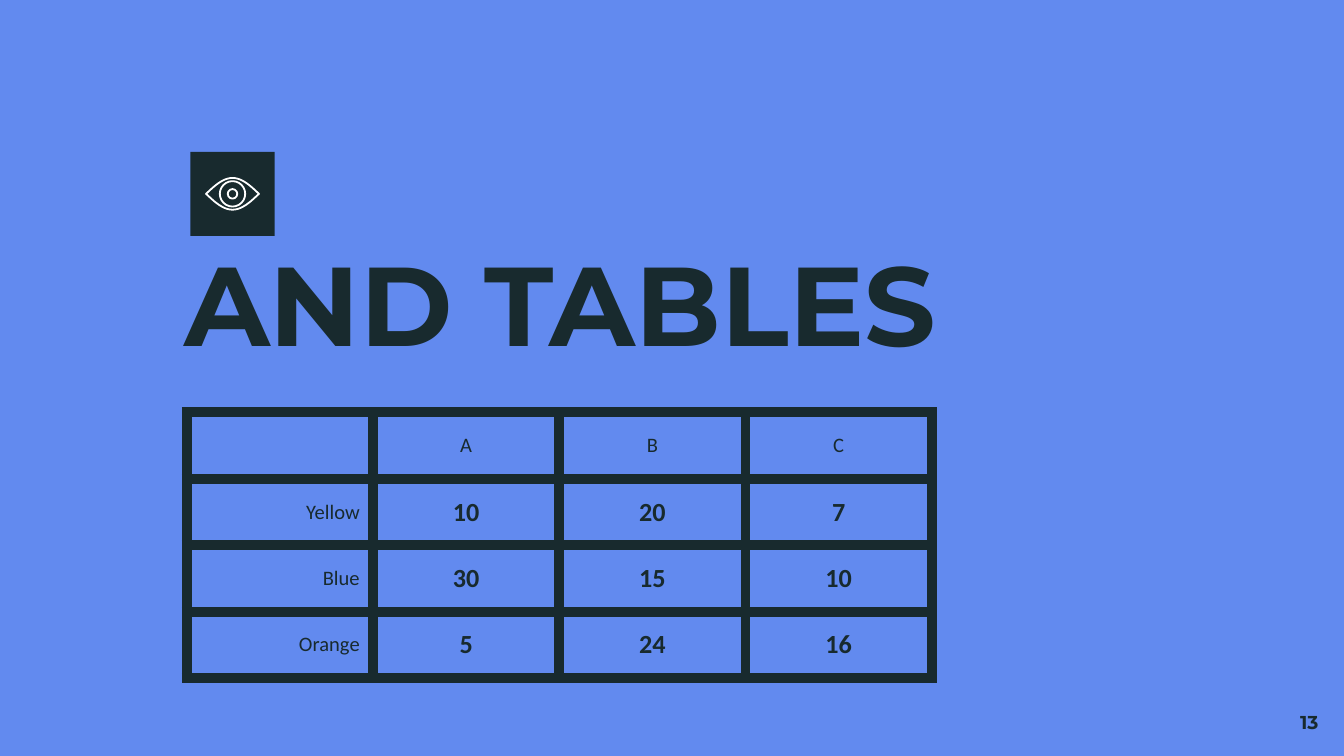
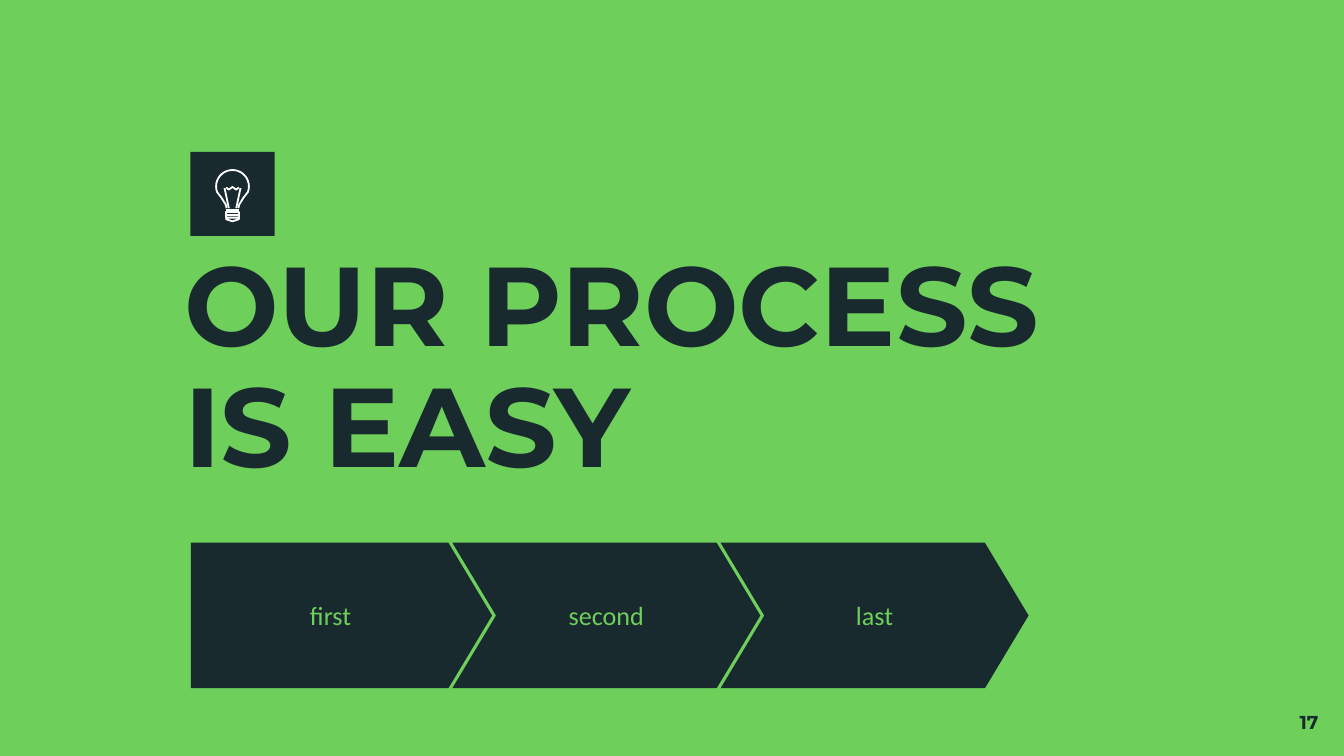
from dataclasses import dataclass
from math import cos, pi, radians, sin

from lxml.etree import SubElement
from pptx import Presentation
from pptx.dml.color import RGBColor as Rgb
from pptx.enum.shapes import MSO_CONNECTOR as Link, MSO_SHAPE as Kind
from pptx.enum.text import MSO_ANCHOR as Anchor, MSO_AUTO_SIZE as Fit, PP_ALIGN as Align
from pptx.oxml.ns import qn
from pptx.util import Cm, Pt


@dataclass(frozen=True)
class Theme:
    dark: str = "182A2E"
    blue: str = "628AEF"
    green: str = "6ECF5B"
    white: str = "FFFFFF"
    head: str = "Montserrat"
    body: str = "Calibri"
    title: int = 60
    value: int = 14
    label: int = 11
    page: int = 10
    icon: float = 0.96
    grid: int = 6


T = Theme()


def paint(shape, fill=None):
    """Solid shape without outline, or a white icon outline without fill."""
    shape.shadow.inherit = False
    if fill:
        shape.fill.solid()
        shape.fill.fore_color.rgb = Rgb.from_string(fill)
        shape.line.fill.background()
    else:
        shape.fill.background()
        shape.line.color.rgb = Rgb.from_string(T.white)
        shape.line.width = Pt(T.icon)


def write(frame, text, font, size, color, bold=False, align=Align.LEFT):
    """Put one formatted paragraph in a text frame or table cell frame."""
    frame.text = text
    para = frame.paragraphs[0]
    para.alignment = align
    para.font.name, para.font.size, para.font.bold = font, Pt(size), bold
    para.font.color.rgb = Rgb.from_string(color)
    return para


deck = Presentation()
deck.slide_width, deck.slide_height = Cm(25.4), Cm(14.29)

# Shared frame: background, badge, title, page number
slides = []
for title, back, page in (("AND TABLES", T.blue, "13"),
                          ("OUR PROCESS IS EASY", T.green, "17")):
    slide = deck.slides.add_slide(deck.slide_layouts[5])
    slides.append(slide)
    slide.background.fill.solid()
    slide.background.fill.fore_color.rgb = Rgb.from_string(back)

    badge = slide.shapes.add_shape(Kind.RECTANGLE, Cm(3.6), Cm(2.87), Cm(1.59), Cm(1.59))
    paint(badge, T.dark)

    head = slide.shapes.title
    head.left, head.top, head.width, head.height = Cm(3.23), Cm(4.47), Cm(18.92), Cm(5.36)
    para = write(head.text_frame, title, T.head, T.title, T.dark, True)
    para.line_spacing = 0.9

    foot = slide.shapes.add_textbox(Cm(23.65), Cm(13.18), Cm(1.52), Cm(1.09))
    write(foot.text_frame, page, T.head, T.page, T.dark, True, Align.RIGHT)

    for frame in (head.text_frame, foot.text_frame):
        frame.word_wrap, frame.auto_size = True, Fit.NONE
        frame.vertical_anchor = Anchor.TOP
        frame.margin_left = frame.margin_right = Cm(0.25)
        frame.margin_top = frame.margin_bottom = Cm(0.25)

first, second = slides
midx, midy = 4.395, 3.665  # badge centre, cm

# Table
rows = (("", "A", "B", "C"),
        ("Yellow", "10", "20", "7"),
        ("Blue", "30", "15", "10"),
        ("Orange", "5", "24", "16"))
table = first.shapes.add_table(4, 4, Cm(3.53), Cm(7.79), Cm(14.08), Cm(4.99)).table
table.first_row = table.horz_banding = False
for col in table.columns:
    col.width = Cm(3.52)
for r, row in enumerate(rows):
    table.rows[r].height = Cm(1.25 if r else 1.27)
    for c, text in enumerate(row):
        cell = table.cell(r, c)
        cell.vertical_anchor = Anchor.MIDDLE
        cell.margin_left = cell.margin_right = Cm(0.25)
        cell.margin_top = cell.margin_bottom = Cm(0.18)
        value = r > 0 and c > 0
        write(cell.text_frame, text, T.body, T.value if value else T.label, T.dark,
              value, Align.CENTER if c else Align.RIGHT)
        props = cell._tc.get_or_add_tcPr()
        for side in ("a:lnL", "a:lnR", "a:lnT", "a:lnB"):
            edge = SubElement(props, qn(side), w=str(Pt(T.grid)))
            SubElement(SubElement(edge, qn("a:solidFill")), qn("a:srgbClr"), val=T.dark)
        cell.fill.background()

# Eye icon
eye = first.shapes.add_group_shape().shapes
half = [(x / 100, 0.3 * cos(pi * x / 100)) for x in range(-50, 51, 5)]
lids = [(x, -y) for x, y in half] + half[-2:0:-1]
for size in (0.18, 0.48):
    ring = eye.add_shape(Kind.OVAL, Cm(midx - size / 2), Cm(midy - size / 2),
                         Cm(size), Cm(size))
    paint(ring)

# Bulb icon
bulb = second.shapes.add_group_shape().shapes
dome = [(0.31 * cos(radians(a)), -0.14 + 0.31 * sin(radians(a)))
        for a in range(160, 381, 10)]
neck = [(0.21, 0.07), (0.13, 0.2), (0.11, 0.27)]
glass = [(-x, y) for x, y in neck[::-1]] + dome + neck
coil = [(-0.12, -0.12), (-0.07, -0.08), (0, -0.13), (0.07, -0.08), (0.12, -0.12)]
tip = [(-0.12, 0.45), (-0.12, 0.48), (0, 0.52), (0.12, 0.48), (0.12, 0.45)]
for top in (0.35, 0.4):
    band = bulb.add_shape(Kind.RECTANGLE, Cm(midx - 0.12), Cm(midy + top),
                          Cm(0.24), Cm(0.05))
    paint(band)
for x1, y1, x2, y2 in ((-0.15, -0.11, -0.07, 0.27), (0.15, -0.11, 0.07, 0.27),
                       (-0.12, 0.3, 0.12, 0.3)):
    wire = bulb.add_connector(Link.STRAIGHT, Cm(midx + x1), Cm(midy + y1),
                              Cm(midx + x2), Cm(midy + y2))
    wire.line.color.rgb = Rgb.from_string(T.white)
    wire.line.width = Pt(T.icon)
    SubElement(wire._element.spPr, qn("a:effectLst"))

# Curved outlines of both icons
for icon, points, closed in ((eye, lids, True), (bulb, glass, False),
                             (bulb, coil, False), (bulb, tip, True)):
    spots = [(Cm(midx + x), Cm(midy + y)) for x, y in points]
    pen = icon.build_freeform(*spots[0])
    pen.add_line_segments(spots[1:], close=closed)
    paint(pen.convert_to_shape())

# Process arrows
left = 3.61
for text, kind, width in (("first", Kind.PENTAGON, 5.69),
                          ("second", Kind.CHEVRON, 5.82),
                          ("last", Kind.CHEVRON, 5.82)):
    step = second.shapes.add_shape(kind, Cm(left), Cm(10.26), Cm(width), Cm(2.75))
    step.adjustments[0] = 0.3
    paint(step, T.dark)
    frame = step.text_frame
    frame.vertical_anchor = Anchor.MIDDLE
    frame.margin_left = frame.margin_right = Cm(0.25)
    frame.margin_top = frame.margin_bottom = Cm(0.25)
    write(frame, text, T.body, T.value, T.green, align=Align.CENTER)
    left += width - 0.75

deck.save("out.pptx")
